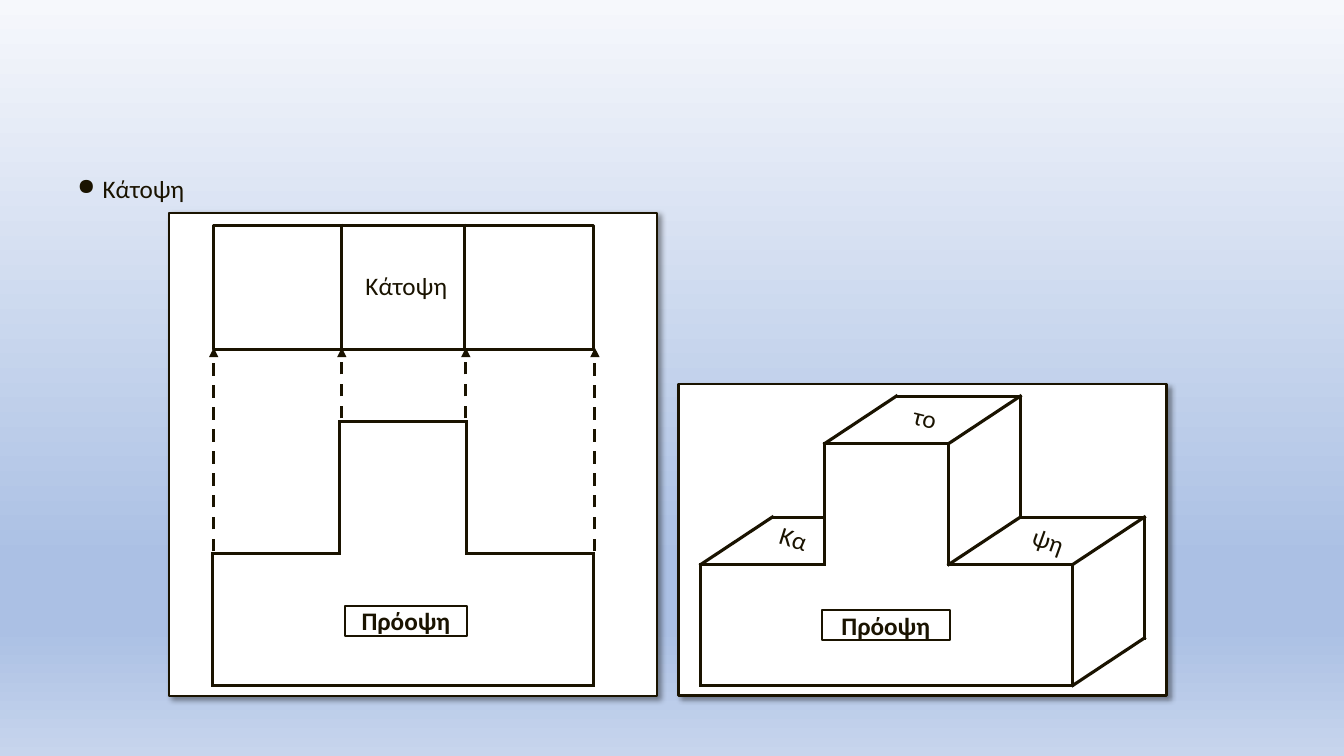
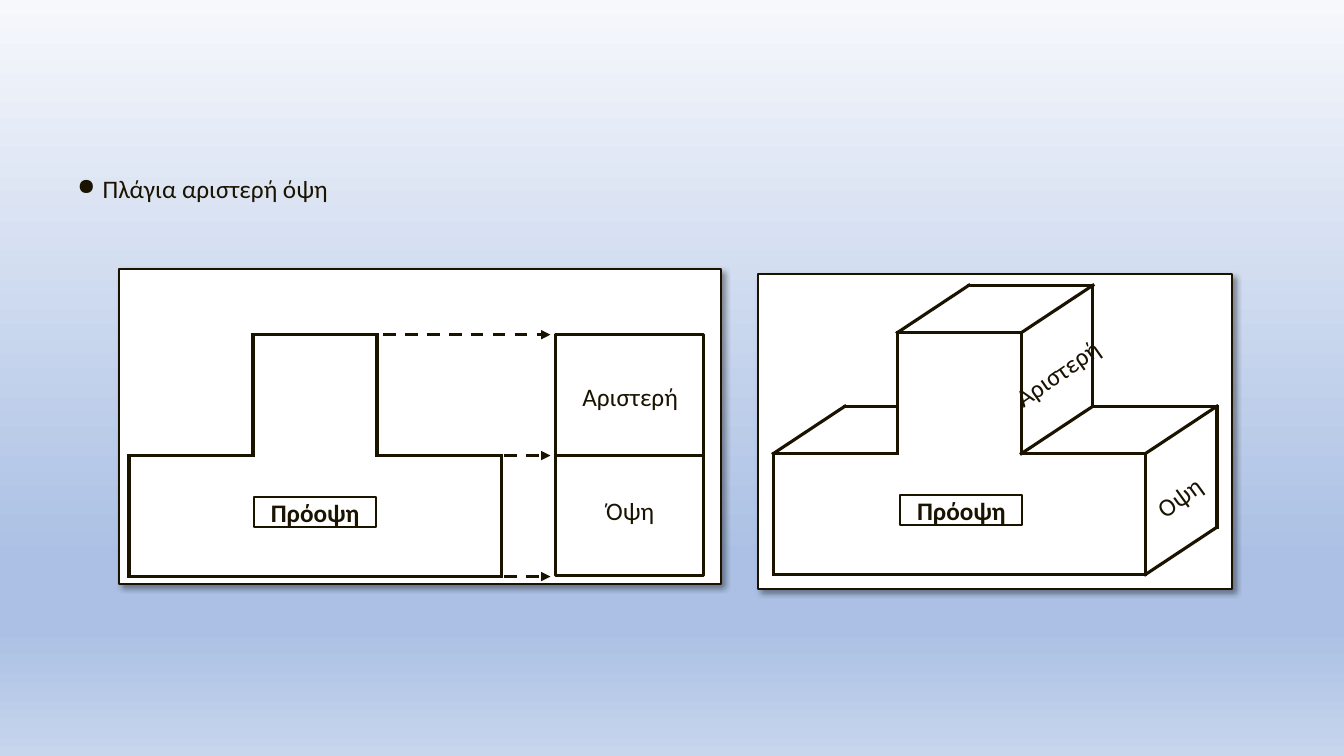
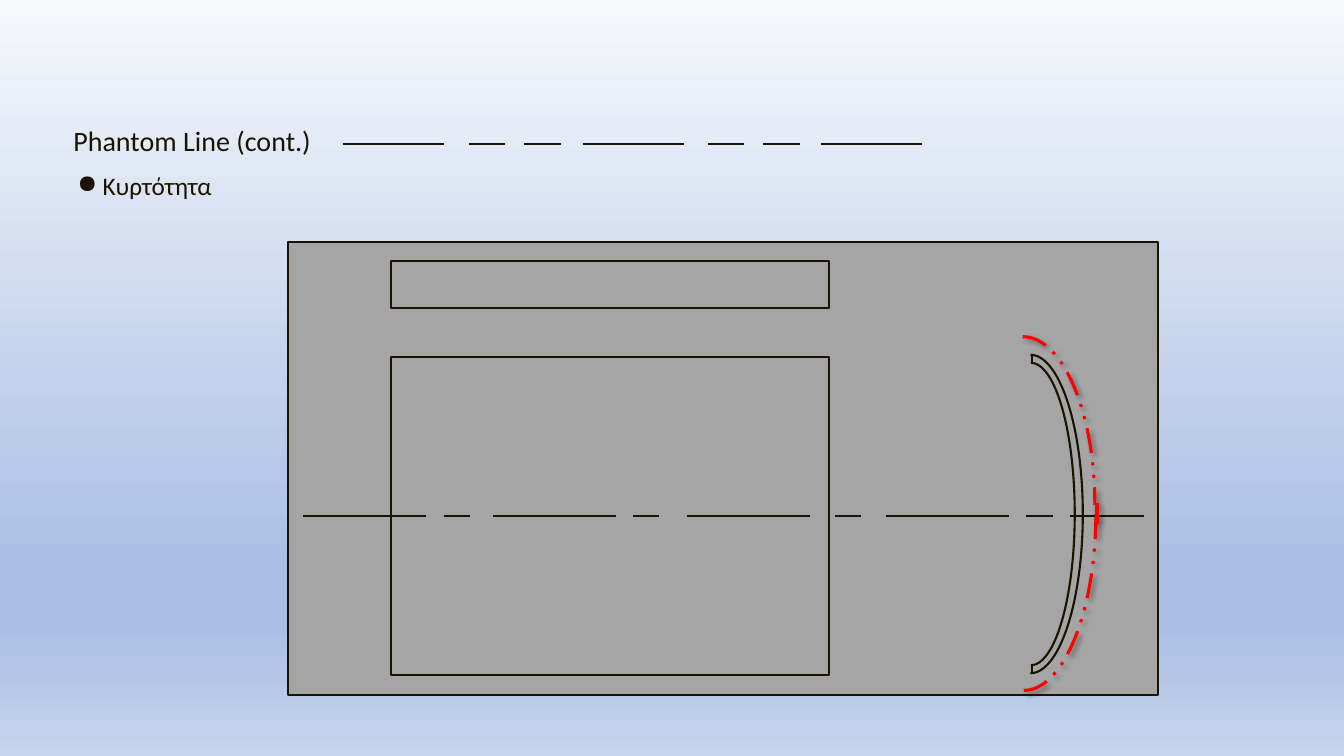
from lxml import etree
from pptx import Presentation
from pptx.dml.color import RGBColor
from pptx.enum.dml import MSO_LINE
from pptx.enum.shapes import MSO_CONNECTOR, MSO_SHAPE
from pptx.enum.text import MSO_ANCHOR, PP_ALIGN
from pptx.oxml.ns import qn
from pptx.util import Inches, Pt

INK = RGBColor(0x1A, 0x13, 0x00)
WHITE = RGBColor(0xFF, 0xFF, 0xFF)
GREY = RGBColor(0xA5, 0xA5, 0xA5)
RED = RGBColor(0xFF, 0x00, 0x00)
BACKDROP = [
    (0, RGBColor(0xF6, 0xF8, 0xFC)),
    (74, RGBColor(0xAB, 0xC0, 0xE4)),
    (83, RGBColor(0xAB, 0xC0, 0xE4)),
    (100, RGBColor(0xC7, 0xD5, 0xED)),
]
FONT = "Calibri"
THIN, THICK = 1.5, 2.25
RECT, ARC = MSO_SHAPE.RECTANGLE, MSO_SHAPE.ARC
STRAIGHT = MSO_CONNECTOR.STRAIGHT
DASH, PHANTOM = MSO_LINE.DASH, MSO_LINE.DASH_DOT_DOT
CENTER, MIDDLE = PP_ALIGN.CENTER, MSO_ANCHOR.MIDDLE
DEPTH_X, DEPTH_Y = 0.71, 0.47

FRONT_EDGES = [
    ((0, 0, 0), (3, 0, 0)), ((3, 0, 0), (3, 1, 0)),
    ((0, 0, 0), (0, 1, 0)), ((2, 1, 0), (3, 1, 0)),
    ((0, 1, 0), (1, 1, 0)), ((2, 1, 0), (2, 2, 0)),
    ((1, 1, 0), (1, 2, 0)), ((1, 2, 0), (2, 2, 0)),
]
DEPTH_EDGES = [
    ((3, 0, 0), (3, 0, 1)), ((3, 0, 1), (3, 1, 1)),
    ((3, 1, 0), (3, 1, 1)), ((2, 1, 0), (2, 1, 1)),
    ((0, 1, 0), (0, 1, 1)), ((2, 1, 1), (3, 1, 1)),
    ((0, 1, 1), (0.42, 1, 1)), ((2, 1, 1), (2, 2, 1)),
    ((2, 2, 0), (2, 2, 1)), ((1, 2, 0), (1, 2, 1)),
    ((1, 2, 1), (2, 2, 1)),
]


class Deck:
    """Holds the shared style and the current slide."""

    def __init__(self):
        self.prs = Presentation()
        self.prs.slide_width, self.prs.slide_height = Inches(13.33), Inches(7.5)
        self.s = None
        master = self.prs.slide_master
        fill = master.background.fill
        fill.gradient()
        fill.gradient_angle = 270
        stops = master.element.find(".//" + qn("p:bgPr")).find(".//" + qn("a:gsLst"))
        for gs in list(stops):
            stops.remove(gs)
        for pos, color in BACKDROP:
            gs = etree.SubElement(stops, qn("a:gs"), pos=str(pos * 1000))
            etree.SubElement(gs, qn("a:srgbClr"), val=str(color))

    def new_slide(self):
        self.s = self.prs.slides.add_slide(self.prs.slide_layouts[6])

    def add_shadow(self, sp):
        effects = sp.element.spPr.find(qn("a:effectLst"))
        shadow = etree.SubElement(
            effects, qn("a:outerShdw"), blurRad=str(Pt(4)), dist=str(Pt(3)),
            dir="2700000", algn="tl", rotWithShape="0")
        color = etree.SubElement(shadow, qn("a:srgbClr"), val="000000")
        etree.SubElement(color, qn("a:alpha"), val="40000")

    def shape(self, x, y, w, h, kind=RECT, fill=None, color=INK, width=THIN,
              dash=None, shadow=False):
        sp = self.s.shapes.add_shape(kind, Inches(x), Inches(y), Inches(w), Inches(h))
        if fill is None:
            sp.fill.background()
        else:
            sp.fill.solid()
            sp.fill.fore_color.rgb = fill
        if width:
            sp.line.color.rgb = color
            sp.line.width = Pt(width)
            sp.line.dash_style = dash
        else:
            sp.line.fill.background()
        sp.shadow.inherit = False
        if shadow:
            self.add_shadow(sp)
        return sp

    def panel(self, x, y, w, h, fill=WHITE):
        self.shape(x, y, w, h, fill=fill, shadow=fill == WHITE)

    def arc(self, x, y, w, h, flip=False, **style):
        sp = self.shape(x, y, w, h, kind=ARC, **style)
        if flip:
            sp.element.spPr.find(qn("a:xfrm")).set("flipV", "1")

    def line(self, x1, y1, x2, y2, color=INK, width=THICK, arrow=False,
             square=False, shadow=False):
        sp = self.s.shapes.add_connector(
            STRAIGHT, Inches(x1), Inches(y1), Inches(x2), Inches(y2))
        sp.line.color.rgb = color
        sp.line.width = Pt(width)
        ln = sp.element.spPr.find(qn("a:ln"))
        if arrow:
            sp.line.dash_style = DASH
            etree.SubElement(ln, qn("a:tailEnd"), type="triangle")
        if square:
            ln.set("cap", "sq")
        etree.SubElement(sp.element.spPr, qn("a:effectLst"))
        if shadow:
            self.add_shadow(sp)

    def strokes(self, y, length, starts):
        for x in starts:
            self.line(x, y, x + length, y, width=THIN)

    def view(self, x, y, w, h, edges=FRONT_EDGES):
        def place(a, b, c):
            return x + a * w + c * DEPTH_X, y - b * h - c * DEPTH_Y

        for start, end in edges:
            self.line(*place(*start), *place(*end), square=True)

    def solid(self, x, y):
        self.view(x, y, 1.23, 1.2, FRONT_EDGES + DEPTH_EDGES)

    def style_runs(self, p, size=18, bold=False):
        for r in p.runs:
            r.font.name = FONT
            r.font.size = Pt(size)
            r.font.bold = bold
            r.font.color.rgb = INK

    def label(self, x, y, w, h, text, rot=0, bold=False, gap=0, **style):
        sp = self.shape(x, y, w, h, **{"width": 0, **style})
        sp.rotation = rot
        tf = sp.text_frame
        tf.margin_left = tf.margin_right = tf.margin_top = tf.margin_bottom = 0
        tf.word_wrap = False
        tf.vertical_anchor = MIDDLE
        tf.text = text
        for p in tf.paragraphs:
            p.alignment = CENTER
            self.style_runs(p, bold=bold)
        tf.paragraphs[0].space_after = Pt(gap)

    def front_label(self, x, y, w=1.21):
        self.label(x, y, w, 0.3, "Πρόοψη", bold=True, fill=WHITE, width=THIN)

    def text(self, x, y, w, h, text, size=18, bullet=0, spacing=1.0):
        tf = self.s.shapes.add_textbox(
            Inches(x), Inches(y), Inches(w), Inches(h)).text_frame
        tf.word_wrap = True
        tf.text = text
        p = tf.paragraphs[0]
        p.line_spacing = spacing
        if bullet:
            pPr = p._p.get_or_add_pPr()
            pPr.set("marL", str(Inches(0.25)))
            pPr.set("indent", str(-Inches(0.25)))
            etree.SubElement(pPr, qn("a:buSzPct"), val=str(bullet * 1000))
            etree.SubElement(pPr, qn("a:buChar"), char="●")
        self.style_runs(p, size)

    def body(self, text, bullet=90, spacing=1.0):
        self.text(0.67, 1.67, 12.11, 5.24, text, bullet=bullet, spacing=spacing)


def top_view(deck):
    deck.new_slide()
    deck.body("Κάτοψη")
    deck.panel(6.73, 3.81, 4.84, 3.09)
    deck.solid(6.95, 6.8)
    deck.front_label(8.15, 6.05, 1.27)
    deck.panel(1.68, 2.11, 4.84, 4.8)
    deck.view(2.11, 6.8, 1.26, 1.31)
    deck.front_label(3.42, 6.01)
    deck.label(10.29, 5.24, 0.22, 0.25, "ψη", rot=19.7, fill=WHITE)
    deck.label(7.74, 5.21, 0.27, 0.25, "Κα", rot=17.3, fill=WHITE)
    deck.label(9.07, 4.04, 0.22, 0.2, "το", rot=14.1, fill=WHITE)
    for x, y in [(5.9, 5.47), (4.62, 4.15), (3.39, 4.15), (2.12, 5.47)]:
        deck.line(x, y, x, 3.45, arrow=True)
    deck.shape(2.12, 2.24, 3.77, 1.23, fill=WHITE, width=THICK)
    deck.label(2.3, 2.67, 3.46, 0.33, "Κάτοψη", fill=WHITE)
    for x in (3.39, 4.61):
        deck.line(x, 2.22, x, 3.48)


def left_view(deck):
    deck.new_slide()
    deck.body("Πλάγια αριστερή όψη")
    deck.panel(1.18, 2.67, 5.97, 3.12)
    deck.panel(7.52, 2.72, 4.7, 3.12)
    deck.label(11.42, 4.83, 0.55, 0.2, "Οψη", rot=324.2)
    deck.label(10.1, 3.59, 0.77, 0.22, "Αριστερή", rot=325.1)
    deck.solid(7.67, 5.7)
    deck.front_label(8.93, 4.91)
    deck.view(1.28, 5.72, 1.23, 1.2)
    deck.front_label(2.52, 4.93)
    deck.label(5.7, 3.75, 1.1, 1.5, "Αριστερή\nΌψη", gap=60)
    deck.shape(5.51, 3.32, 1.47, 2.39, width=THICK)
    deck.line(5.51, 4.52, 6.97, 4.52)
    for x, y in [(3.8, 3.32), (5, 4.52), (5, 5.72)]:
        deck.line(x, y, 5.46, y, arrow=True)


def phantom_line(deck):
    deck.new_slide()
    deck.body("Κυρτότητα", bullet=100, spacing=0.9)
    deck.panel(2.86, 2.4, 8.63, 4.5, fill=GREY)
    for flip in (False, True):
        deck.arc(9.7, 3.52, 1.04, 3.16, flip)
        deck.arc(9.79, 3.6, 0.87, 3, flip)
    for y in (3.52, 6.6):
        deck.line(10.24, y, 10.24, y + 0.08, width=THIN)
    deck.shape(3.88, 3.54, 4.34, 3.16)
    deck.shape(3.88, 2.59, 4.34, 0.47)
    deck.text(0.63, 1.18, 12.06, 0.44, "Phantom Line (cont.)", size=20)
    red = {"color": RED, "width": THICK, "shadow": True}
    deck.arc(9.43, 3.34, 1.43, 3.34, dash=PHANTOM, **red)
    deck.arc(9.44, 3.33, 1.43, 3.52, flip=True, dash=PHANTOM, **red)
    deck.strokes(5.12, 1.22, [3.01, 4.89, 6.81, 8.79])
    deck.strokes(5.12, 0.26, [4.4, 6.28, 8.28, 10.18])
    deck.strokes(5.12, 0.74, [10.61])
    deck.line(10.88, 4.99, 10.88, 5.2, **red)
    deck.strokes(1.43, 1, [3.4, 5.78, 8.14])
    deck.strokes(1.43, 0.36, [4.65, 5.2, 7.02, 7.57])


def main():
    deck = Deck()
    top_view(deck)
    left_view(deck)
    phantom_line(deck)
    deck.prs.save("out.pptx")


if __name__ == "__main__":
    main()
